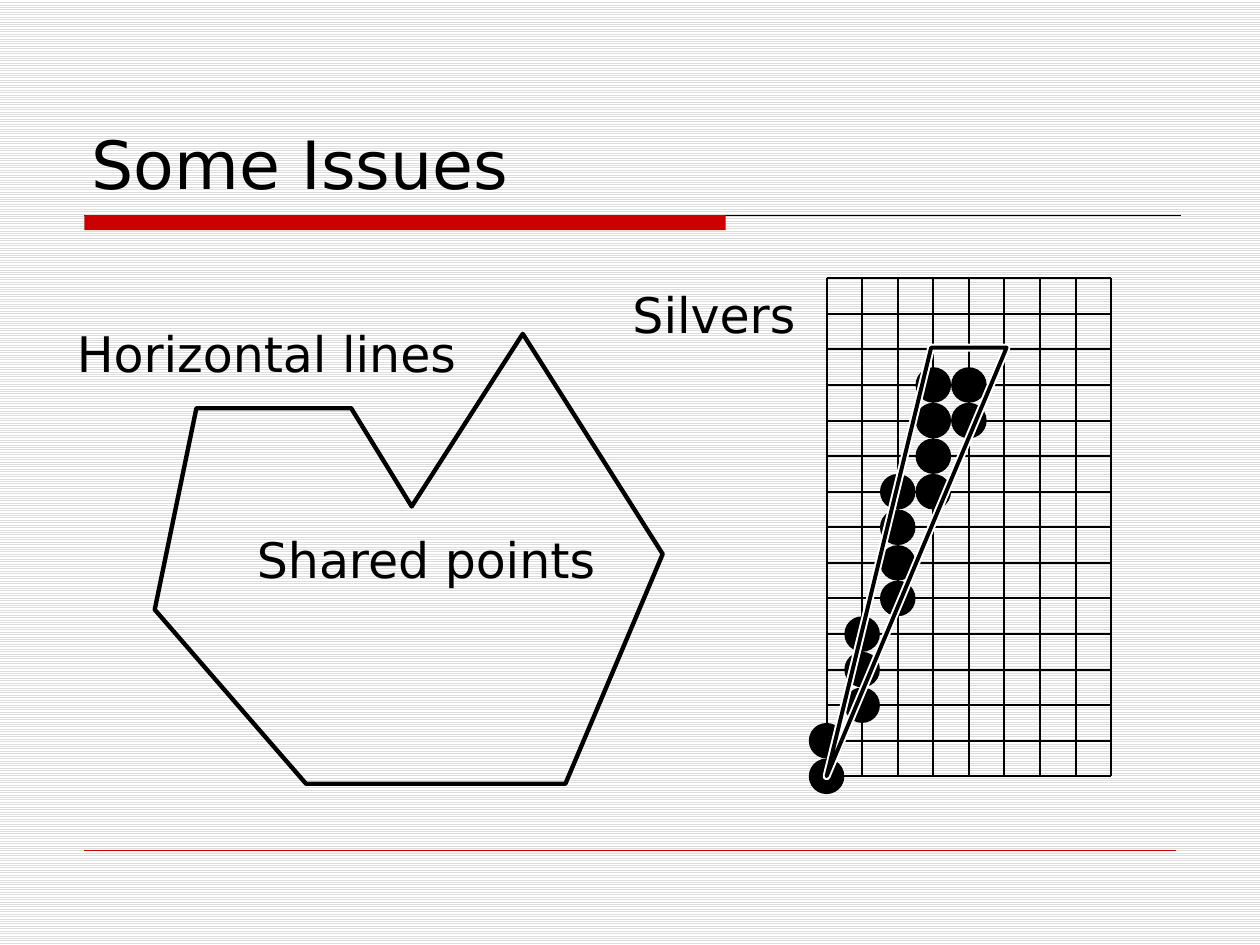
from dataclasses import dataclass

from lxml import etree
from pptx import Presentation
from pptx import util as u
from pptx.dml.color import RGBColor
from pptx.enum import dml, shapes, text
from pptx.oxml.ns import qn


@dataclass(frozen=True)
class Theme:
    """Colours, font and type sizes of the slide."""
    ink: RGBColor = RGBColor(0, 0, 0)
    accent: RGBColor = RGBColor(0xCC, 0, 0)
    paper: RGBColor = RGBColor(0xFF, 0xFF, 0xFF)
    stripe: RGBColor = RGBColor(0xDD, 0xDD, 0xDD)
    font: str = "DejaVu Sans"
    title_size: int = 38
    label_size: int = 28


@dataclass(frozen=True)
class Box:
    """A region of the slide, in centimetres."""
    left: float
    top: float
    width: float
    height: float

    def inner(self, dx, dy, width=0, height=0):
        """Return a box placed relative to this one."""
        return Box(self.left + dx, self.top + dy, width, height)

    def lengths(self):
        """Return left, top, width and height as lengths."""
        return [u.Cm(side) for side in (self.left, self.top, self.width, self.height)]


THEME = Theme()


def add_label(slide, box, wording, size, wrap=False):
    """Write one line of text in the box."""
    label = slide.shapes.add_textbox(*box.lengths())
    frame = label.text_frame
    frame.text = wording
    frame.word_wrap = wrap
    frame.auto_size = text.MSO_AUTO_SIZE.NONE if wrap else text.MSO_AUTO_SIZE.SHAPE_TO_FIT_TEXT
    font = frame.paragraphs[0].runs[0].font
    font.name, font.size = THEME.font, u.Pt(size)
    font.color.rgb = THEME.ink
    return frame


def add_rule(slide, box, colour, weight):
    """Draw a straight line from the box's top left to its bottom right."""
    left, top, width, height = box.lengths()
    rule = slide.shapes.add_connector(
        shapes.MSO_CONNECTOR.STRAIGHT, left, top, left + width, top + height)
    rule.line.color.rgb = colour
    rule.line.width = u.Pt(weight)
    etree.SubElement(rule.element.spPr, qn("a:effectLst"))


def add_solid(slide, preset, box, colour):
    """Draw a filled preset shape without an outline."""
    solid = slide.shapes.add_shape(preset, *box.lengths())
    solid.shadow.inherit = False
    solid.fill.solid()
    solid.fill.fore_color.rgb = colour
    solid.line.fill.background()


def add_outline(slide, box, corners, colour, weight):
    """Draw a closed, unfilled polygon with corners relative to the box."""
    points = [(u.Cm(box.left + x), u.Cm(box.top + y)) for x, y in corners]
    builder = slide.shapes.build_freeform(*points[0])
    builder.add_line_segments(points[1:], close=True)
    outline = builder.convert_to_shape()
    outline.shadow.inherit = False
    outline.fill.background()
    outline.line.color.rgb = colour
    outline.line.width = u.Pt(weight)


def add_header(slide, box):
    """Place the title above its rule and red bar."""
    title = add_label(slide, box.inner(-0.1, 0, 22.23, 3.38), "Some Issues",
                      THEME.title_size, wrap=True)
    title.vertical_anchor = text.MSO_ANCHOR.BOTTOM
    rule_top = box.height - 0.3
    add_rule(slide, box.inner(0, rule_top, box.width), THEME.ink, 0.75)
    add_solid(slide, shapes.MSO_SHAPE.RECTANGLE,
              box.inner(0, rule_top, 12.93, 0.3), THEME.accent)


def add_polygon_issues(slide, box):
    """Place the polygon with its horizontal edges and shared points."""
    corners = [(0, 5.56), (3.05, 9.07), (8.28, 9.07), (10.24, 4.44),
               (7.42, 0), (5.18, 3.48), (3.96, 1.5), (0.84, 1.5)]
    add_outline(slide, box.inner(1.82, 0.33), corners, THEME.ink, 2.5)
    add_label(slide, box.inner(0, 0, 8.23, 1.45), "Horizontal lines", THEME.label_size)
    add_label(slide, box.inner(3.63, 4.14, 7.47, 1.45), "Shared points", THEME.label_size)


def add_sliver_issue(slide, box):
    """Place the pixel grid, the filled pixels and the thin triangle."""
    columns, rows = 8, 14
    cell = box.height / rows
    grid_width = columns * cell
    grid = box.inner(box.width - grid_width, 0)
    for column in range(columns + 1):
        add_rule(slide, grid.inner(column * cell, 0, 0, box.height), THEME.ink, 1.13)
    for row in range(rows + 1):
        add_rule(slide, grid.inner(0, row * cell, grid_width), THEME.ink, 1.13)

    filled_rows = {0: (13, 14), 1: (10, 11, 12), 2: (6, 7, 8, 9),
                   3: (3, 4, 5, 6), 4: (3, 4)}
    for column, pixel_rows in filled_rows.items():
        for row in pixel_rows:
            pixel = grid.inner((column - 0.5) * cell, (row - 0.5) * cell, cell, cell)
            add_solid(slide, shapes.MSO_SHAPE.OVAL, pixel, THEME.ink)

    sliver = [(x * cell, y * cell) for x, y in ((0, 14), (2.94, 1.95), (5.06, 1.95))]
    for colour, weight in ((THEME.paper, 4.5), (THEME.ink, 2.25)):
        add_outline(slide, grid, sliver, colour, weight)
    add_label(slide, box.inner(0, 0, 3.86, 1.45), "Silvers", THEME.label_size)


def add_footer(slide, box):
    """Draw the thin closing rule."""
    add_rule(slide, box, THEME.accent, 0.25)


def main():
    """Build and save the slide."""
    deck = Presentation()
    deck.slide_width, deck.slide_height = u.Cm(25.4), u.Cm(19.05)
    slide = deck.slides.add_slide(deck.slide_layouts[6])
    paper = slide.background.fill
    paper.patterned()
    paper.pattern = dml.MSO_PATTERN.LIGHT_HORIZONTAL
    paper.fore_color.rgb = THEME.stripe
    paper.back_color.rgb = THEME.paper
    add_header(slide, Box(1.7, 0.84, 22.1, 3.8))
    add_polygon_issues(slide, Box(1.3, 6.4, 12.06, 9.4))
    add_sliver_issue(slide, Box(12.5, 5.61, 9.9, 10.04))
    add_footer(slide, Box(1.7, 17.15, 22, 0))
    deck.save("out.pptx")


if __name__ == "__main__":
    main()
